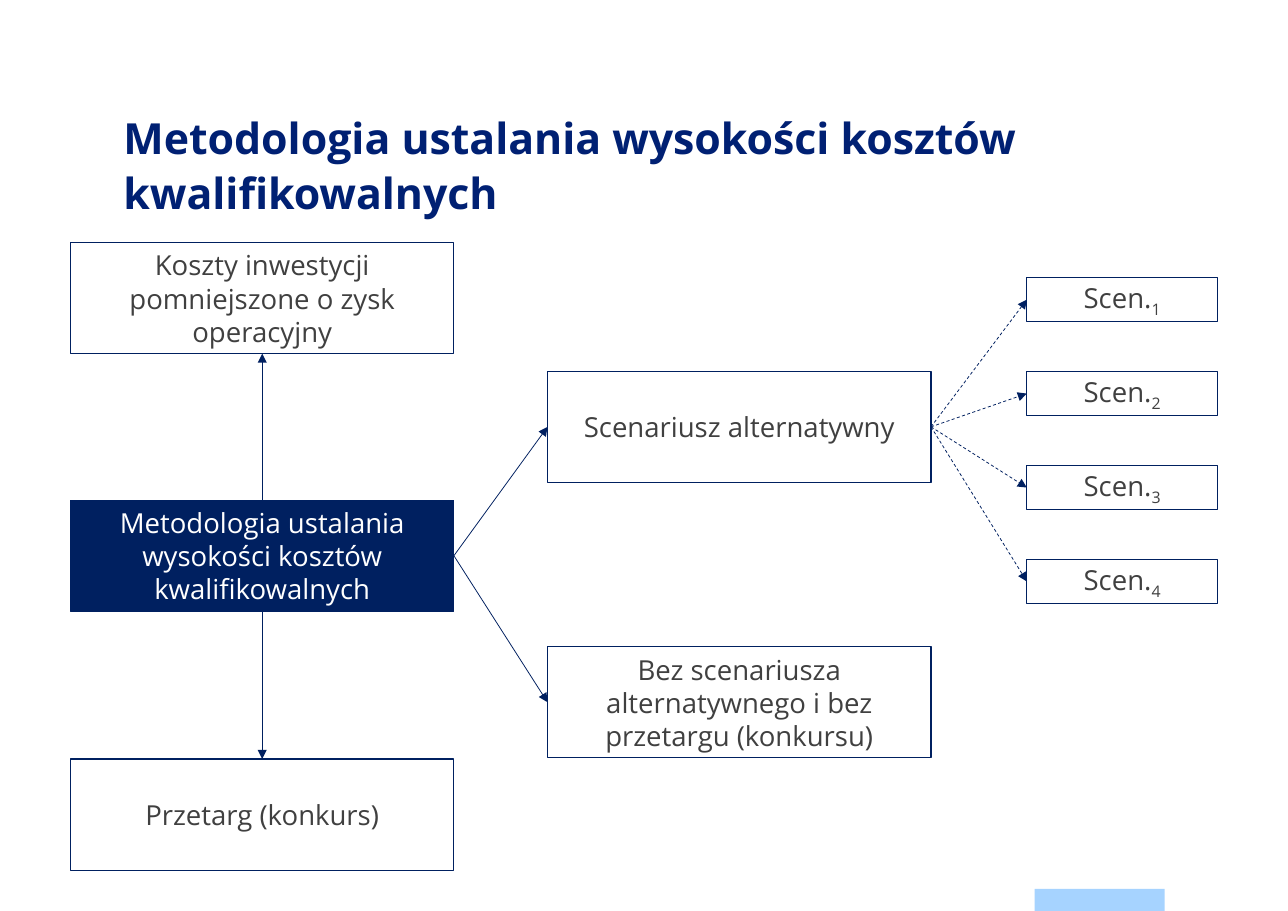
import pptx
import pptx.util
import pptx.dml.color
import pptx.enum.dml
import pptx.enum.shapes
import pptx.enum.text
import pptx.oxml.ns
import lxml.etree

Inches = pptx.util.Inches
Pt = pptx.util.Pt

FONT = "Open Sans"
COLORS = {"title": "002073", "navy": "002060", "text": "404040", "white": "FFFFFF", "accent": "A6D3FF"}
TITLE = "Metodologia ustalania wysokości kosztów kwalifikowalnych"
BOX_SIZE = (3.48, 1.01)
SCENARIO_SIZE = (1.73, 0.4)
SCENARIO_LEFT, SCENARIO_TOP, SCENARIO_STEP = 9.32, 2.52, 0.853
SCENARIO_COUNT = 4

BOXES = {
    "profit": ("Koszty inwestycji pomniejszone o zysk operacyjny", 0.64, 2.2),
    "method": (TITLE, 0.64, 4.54),
    "tender": ("Przetarg (konkurs)", 0.64, 6.89),
    "no_scenario": ("Bez scenariusza alternatywnego i bez przetargu (konkursu)", 4.97, 5.87),
    "alternative": ("Scenariusz alternatywny", 4.97, 3.37),
}
TOP, LEFT, BOTTOM, RIGHT = range(4)
ARROWS = [
    ("method", TOP, "profit", BOTTOM),
    ("method", BOTTOM, "tender", TOP),
    ("method", RIGHT, "alternative", LEFT),
    ("method", RIGHT, "no_scenario", LEFT),
]


def color(name):
    return pptx.dml.color.RGBColor.from_string(COLORS[name])


def add_box(slide, text, left, top, size, filled=False, subscript=None):
    shape = slide.shapes.add_shape(
        pptx.enum.shapes.MSO_SHAPE.RECTANGLE, Inches(left), Inches(top), *map(Inches, size))
    shape.shadow.inherit = False
    if filled:
        shape.fill.solid()
        shape.fill.fore_color.rgb = color("navy")
    else:
        shape.fill.background()
    shape.line.color.rgb = color("navy")
    shape.line.width = Pt(0.75)
    frame = shape.text_frame
    frame.word_wrap = True
    frame.margin_top = frame.margin_bottom = 0
    frame.vertical_anchor = pptx.enum.text.MSO_ANCHOR.MIDDLE
    paragraph = frame.paragraphs[0]
    paragraph.alignment = pptx.enum.text.PP_ALIGN.CENTER
    paragraph.font.name = FONT
    paragraph.font.size = Pt(18)
    paragraph.font.color.rgb = color("white" if filled else "text")
    paragraph.add_run().text = text
    if subscript:
        run = paragraph.add_run()
        run.text = subscript
        run.font._element.set("baseline", "-25000")
    return shape


def add_arrow(slide, source, source_side, target, target_side, dashed=False):
    connector = slide.shapes.add_connector(pptx.enum.shapes.MSO_CONNECTOR.STRAIGHT, 0, 0, 0, 0)
    connector.begin_connect(source, source_side)
    connector.end_connect(target, target_side)
    connector.line.color.rgb = color("navy")
    connector.line.width = Pt(0.5)
    if dashed:
        connector.line.dash_style = pptx.enum.dml.MSO_LINE.DASH
    qn = pptx.oxml.ns.qn
    properties = connector._element.spPr
    lxml.etree.SubElement(properties.find(qn("a:ln")), qn("a:tailEnd"), type="triangle")
    lxml.etree.SubElement(properties, qn("a:effectLst"))


def add_title(slide):
    title = slide.shapes.title
    title.left, title.top, title.width, title.height = map(Inches, (1.12, 0.98, 9.45, 1.18))
    frame = title.text_frame
    frame.margin_left = frame.margin_right = frame.margin_top = frame.margin_bottom = 0
    frame.word_wrap = True
    frame.auto_size = pptx.enum.text.MSO_AUTO_SIZE.NONE
    frame.vertical_anchor = pptx.enum.text.MSO_ANCHOR.TOP
    frame.text = TITLE
    paragraph = frame.paragraphs[0]
    paragraph.alignment = pptx.enum.text.PP_ALIGN.LEFT
    paragraph.line_spacing = Pt(36)
    paragraph.font.name = FONT
    paragraph.font.size = Pt(28)
    paragraph.font.bold = True
    paragraph.font.color.rgb = color("title")


def add_footer_bar(slide):
    bar = slide.shapes.add_shape(
        pptx.enum.shapes.MSO_SHAPE.RECTANGLE, *map(Inches, (9.39, 8.07, 1.18, 0.2)))
    bar.shadow.inherit = False
    bar.fill.solid()
    bar.fill.fore_color.rgb = color("accent")
    bar.line.fill.background()


def main():
    presentation = pptx.Presentation()
    presentation.slide_width = Inches(11.69)
    presentation.slide_height = Inches(8.27)
    slide = presentation.slides.add_slide(presentation.slide_layouts[5])
    add_footer_bar(slide)
    add_title(slide)
    boxes = {
        name: add_box(slide, text, left, top, BOX_SIZE, filled=name == "method")
        for name, (text, left, top) in BOXES.items()
    }
    for source, source_side, target, target_side in ARROWS:
        add_arrow(slide, boxes[source], source_side, boxes[target], target_side)
    for index in range(SCENARIO_COUNT):
        top = SCENARIO_TOP + index * SCENARIO_STEP
        scenario = add_box(slide, "Scen.", SCENARIO_LEFT, top, SCENARIO_SIZE, subscript=str(index + 1))
        add_arrow(slide, boxes["alternative"], RIGHT, scenario, LEFT, dashed=True)
    presentation.save("out.pptx")


if __name__ == "__main__":
    main()
